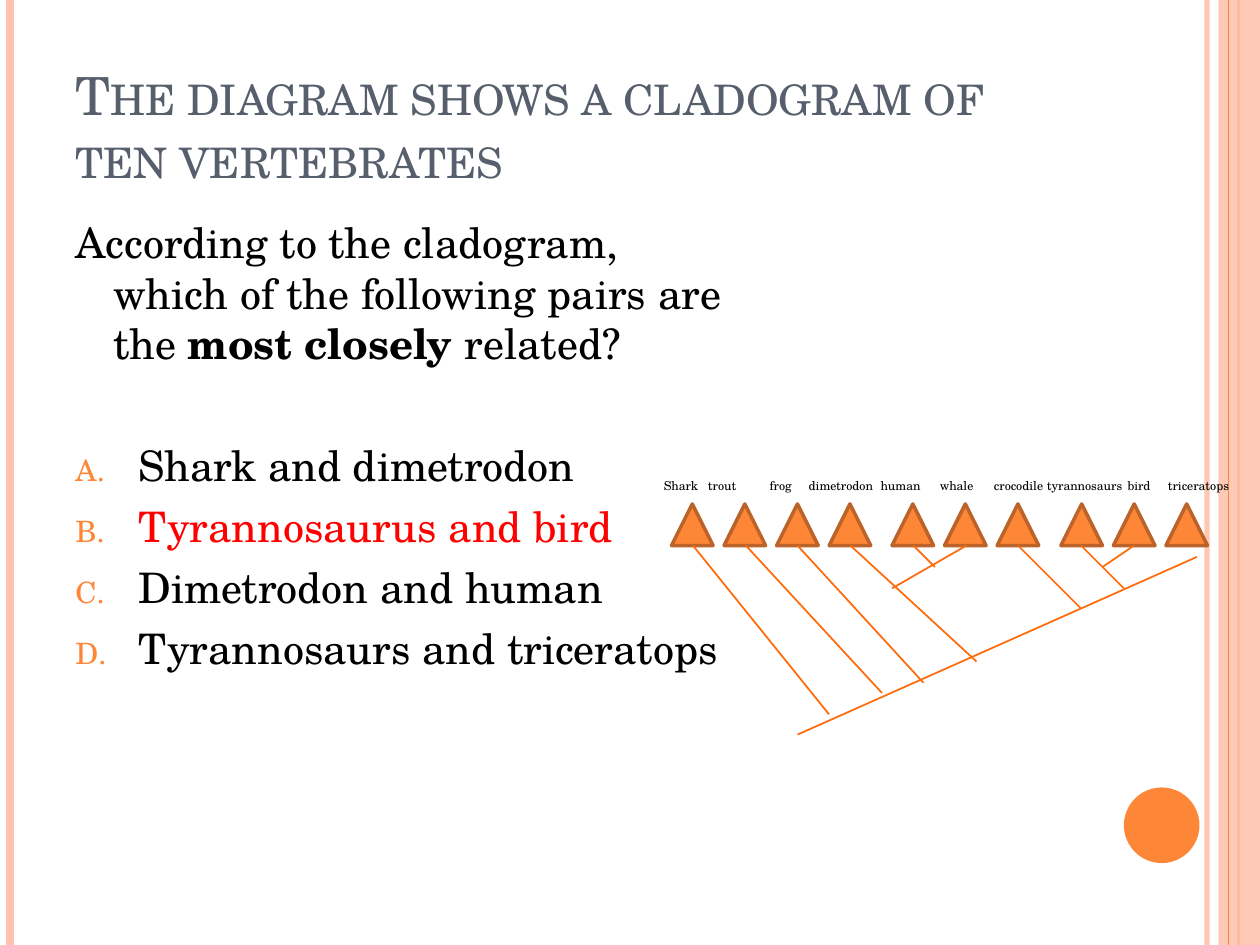
from dataclasses import dataclass

from pptx import Presentation
from pptx.dml.color import RGBColor
from pptx.enum.shapes import MSO_CONNECTOR, MSO_SHAPE
from pptx.enum.text import MSO_ANCHOR
from pptx.oxml.ns import qn
from pptx.util import Inches, Pt
from lxml.etree import SubElement


@dataclass(frozen=True)
class Theme:
    font: str = "TeX Gyre Schola"
    orange: str = "FE8637"
    outline: str = "BC6329"
    branch: str = "FF6B0A"
    pale: str = "FEC3AE"
    heading: str = "575F6D"
    text: str = "000000"
    answer: str = "FF0000"
    title_size: int = 30
    body_size: int = 24
    label_size: int = 7


class SlideBuilder:
    def __init__(self, page, theme):
        self.page = page
        self.theme = theme

    def set_opacity(self, color_parent, opacity):
        if opacity < 100:
            color = color_parent.find(".//" + qn("a:srgbClr"))
            SubElement(color, qn("a:alpha"), val=str(opacity * 1000))

    def line(self, start, end, color, width, opacity=100):
        points = [Inches(value) for value in (*start, *end)]
        connector = self.page.shapes.add_connector(MSO_CONNECTOR.STRAIGHT, *points)
        connector.line.color.rgb = RGBColor.from_string(color)
        connector.line.width = Pt(width)
        properties = connector._element.spPr
        self.set_opacity(properties, opacity)
        SubElement(properties, qn("a:effectLst"))

    def shape(self, kind, area, fill, outline=None, opacity=100):
        shape = self.page.shapes.add_shape(kind, *map(Inches, area))
        shape.shadow.inherit = False
        shape.fill.solid()
        shape.fill.fore_color.rgb = RGBColor.from_string(fill)
        self.set_opacity(shape._element.spPr, opacity)
        if outline:
            shape.line.color.rgb = RGBColor.from_string(outline)
            shape.line.width = Pt(2)
        else:
            shape.line.fill.background()

    def text(self, area, lines, size, color, anchor=MSO_ANCHOR.TOP):
        box = self.page.shapes.add_textbox(*map(Inches, area))
        frame = box.text_frame
        frame.word_wrap = True
        frame.vertical_anchor = anchor
        frame.text = "\n".join(lines)
        for paragraph in frame.paragraphs:
            for run in paragraph.runs:
                self.style(run, size, color)
        return frame.paragraphs

    def style(self, run, size, color, bold=False):
        run.font.name = self.theme.font
        run.font.size = Pt(size)
        run.font.color.rgb = RGBColor.from_string(color)
        run.font.bold = bold

    def hang(self, paragraph, indent, space_before):
        paragraph.space_before = Pt(space_before)
        properties = paragraph._p.get_or_add_pPr()
        properties.set("marL", str(Inches(indent)))
        properties.set("indent", str(-Inches(indent)))
        return properties

    def letter(self, paragraph, space_before):
        properties = self.hang(paragraph, 0.5, space_before)
        color = SubElement(properties, qn("a:buClr"))
        SubElement(color, qn("a:srgbClr"), val=self.theme.orange)
        SubElement(properties, qn("a:buSzPct"), val="70000")
        SubElement(properties, qn("a:buFont"), typeface="+mj-lt")
        SubElement(properties, qn("a:buAutoNum"), type="alphaUcPeriod")

    def tabs(self, paragraph, stops):
        tab_list = SubElement(paragraph._p.get_or_add_pPr(), qn("a:tabLst"))
        for stop in stops:
            SubElement(tab_list, qn("a:tab"), pos=str(Inches(stop)), algn="l")


def add_frame(builder):
    theme = builder.theme

    def rule(x, color, width, opacity=100):
        builder.line((x, 0), (x, 7.5), color, width, opacity)

    rule(9.58, theme.pale, 3, 93)
    rule(0.08, theme.pale, 4.5)
    rule(9.83, theme.orange, 1.5)
    builder.shape(MSO_SHAPE.RECTANGLE, (9.67, 0, 0.33, 7.5), theme.pale, opacity=87)
    rule(9.75, theme.orange, 0.75)
    builder.shape(MSO_SHAPE.OVAL, (8.92, 6.25, 0.6, 0.6), theme.orange)


def add_question(builder):
    theme = builder.theme
    title = builder.text((0.5, 0.3, 8.17, 1.25),
                         ["The diagram shows a cladogram of ten vertebrates"],
                         theme.title_size, theme.heading, MSO_ANCHOR.BOTTOM)
    title[0].runs[0].font._element.set("cap", "small")

    answers = ["Shark and dimetrodon", "Tyrannosaurus and bird",
               "Dimetrodon and human", "Tyrannosaurs and triceratops"]
    opening = "According to the cladogram, which of the following pairs are the "
    question, *choices = builder.text((0.5, 1.67, 5.42, 5.41), [opening, *answers],
                                      theme.body_size, theme.text)
    builder.hang(question, 0.3, 6)
    for words, bold in (("most closely ", True), ("related?", False)):
        span = question.add_run()
        span.text = words
        builder.style(span, theme.body_size, theme.text, bold)
    for index, choice in enumerate(choices):
        builder.letter(choice, 6 if index else 41)
    builder.style(choices[1].runs[0], theme.body_size, theme.answer)


def add_cladogram(builder):
    theme = builder.theme
    top, size, pitch = 4, 0.33, 0.417
    base = top + size
    builder.line((6.33, 5.83), (9.5, 4.42), theme.branch, 1)
    for left, count in ((5.33, 4), (7.08, 3), (8.42, 3)):
        for index in range(count):
            builder.shape(MSO_SHAPE.FLOWCHART_EXTRACT,
                          (left + index * pitch, top, size, size),
                          theme.orange, theme.outline)

    branches = [
        (5.5, 6.58, 5.67), (5.92, 7, 5.5), (6.33, 7.33, 5.42), (6.75, 7.75, 5.25),
        (7.25, 7.42, 4.5), (7.67, 7.08, 4.67), (8.08, 8.58, 4.83),
        (8.58, 8.92, 4.67), (9, 8.75, 4.5),
    ]
    for tip, end_x, end_y in branches:
        builder.line((tip, base), (end_x, end_y), theme.branch, 1)

    animals = ["Shark", "trout", "frog", "dimetrodon", "human", "whale",
               "crocodile", "tyrannosaurs", "bird", "triceratops"]
    stops = [0.35, 0.84, 1.15, 1.72, 2.19, 2.62, 3.04, 3.68, 4]
    labels = builder.text((5.17, 3.75, 4.89, 0.22), ["\t".join(animals)],
                          theme.label_size, theme.text)
    builder.tabs(labels[0], stops)


def main():
    deck = Presentation()
    deck.slide_width, deck.slide_height = Inches(10), Inches(7.5)
    builder = SlideBuilder(deck.slides.add_slide(deck.slide_layouts[6]), Theme())
    add_frame(builder)
    add_question(builder)
    add_cladogram(builder)
    deck.save("out.pptx")


if __name__ == "__main__":
    main()
